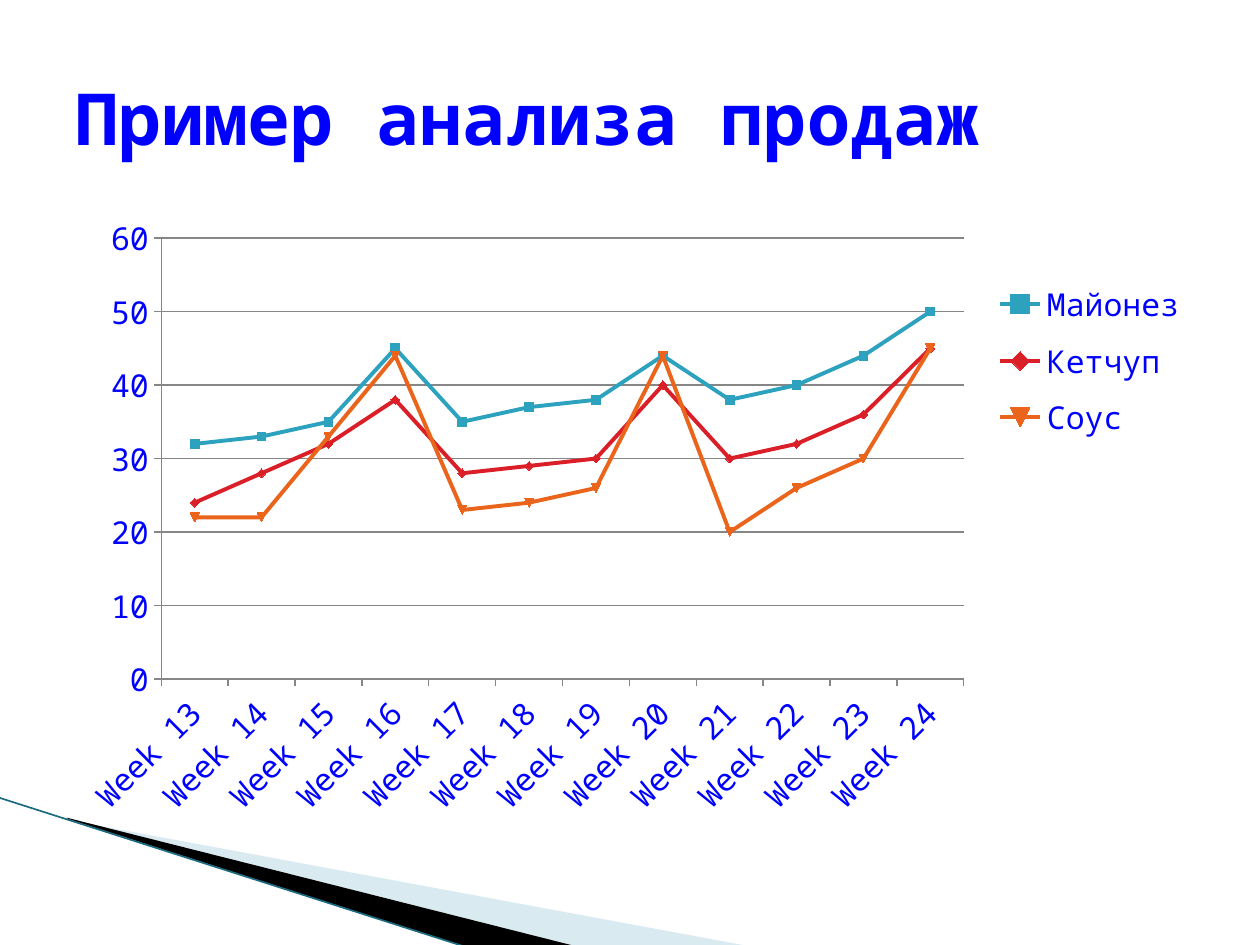
from typing import NamedTuple

from lxml import etree
from pptx import Presentation
from pptx import util as u
from pptx.chart.data import CategoryChartData
from pptx.dml.color import RGBColor
from pptx.enum import chart as ch, shapes, text
from pptx.oxml.ns import qn

BLUE = RGBColor(0x00, 0x00, 0xFF)
BLACK = RGBColor(0x00, 0x00, 0x00)
PALE = RGBColor(0xA0, 0xCB, 0xDC)
DARK = RGBColor(0x1A, 0x6B, 0x80)
GRAY = RGBColor(0x86, 0x86, 0x86)
TEAL = RGBColor(0x2D, 0xA2, 0xBF)
RED = RGBColor(0xDA, 0x1F, 0x28)
ORANGE = RGBColor(0xEB, 0x64, 0x1B)
FACE = "Noto Sans Mono"
LABEL = {"name": FACE, "size": u.Pt(18), "bold": False}
TITLE = {"name": FACE, "size": u.Pt(41), "bold": True}
WIDE, HIGH = 9, 4.95


class Wedge(NamedTuple):
    points: list[tuple[float, float]]
    fill: RGBColor
    alpha: int


class Sales(NamedTuple):
    name: str
    color: RGBColor
    values: list[int]


class Area(NamedTuple):
    left: float
    top: float
    width: float
    height: float


PLOT = Area(0.78, 0.27, 6.37, 3.5)
LEGEND = Area(7.35, 0.52, 1.6, 1.45)
WEDGES = [
    Wedge([(0.55, 6.51), (5.95, 7.51), (4.56, 7.51), (0.55, 6.5)], PALE, 40),
    Wedge([(0.53, 6.49), (4.57, 7.51), (3.72, 7.52), (0.54, 6.5)], BLACK, 100),
]
SALES = [
    Sales("Майонез", TEAL, [32, 33, 35, 45, 35, 37, 38, 44, 38, 40, 44, 50]),
    Sales("Кетчуп", RED, [24, 28, 32, 38, 28, 29, 30, 40, 30, 32, 36, 45]),
    Sales("Соус", ORANGE, [22, 22, 33, 44, 23, 24, 26, 44, 20, 26, 30, 45]),
]


def style(font, look: dict) -> None:
    for key, value in look.items():
        setattr(font, key, value)
    font.color.rgb = BLUE


def draw_wedge(slide, wedge: Wedge) -> None:
    points = [(u.Inches(x), u.Inches(y)) for x, y in wedge.points]
    pen = slide.shapes.build_freeform(*points[0])
    pen.add_line_segments(points[1:], close=True)
    shape = pen.convert_to_shape()
    shape.shadow.inherit = False
    shape.fill.solid()
    shape.fill.fore_color.rgb = wedge.fill
    shape.line.fill.background()
    if wedge.alpha < 100:
        color = shape.element.spPr.find(qn("a:solidFill"))[0]
        etree.SubElement(color, qn("a:alpha"), val=str(wedge.alpha * 1000))


def draw_edge(slide) -> None:
    edge = slide.shapes.add_connector(
        shapes.MSO_CONNECTOR.STRAIGHT,
        u.Inches(-0.01), u.Inches(6.33), u.Inches(3.71), u.Inches(7.52))
    edge.line.color.rgb = DARK
    edge.line.width = u.Pt(0.95)
    etree.SubElement(edge.element.spPr, qn("a:effectLst"))


def place(part, area: Area, before: str, inner: bool = False) -> None:
    for old in part.findall(qn("c:layout")):
        part.remove(old)
    layout = etree.Element(qn("c:layout"))
    part.find(qn(before)).addprevious(layout)
    manual = etree.SubElement(layout, qn("c:manualLayout"))
    marks = {"layoutTarget": "inner"} if inner else {}
    marks |= {"xMode": "edge", "yMode": "edge",
              "x": area.left / WIDE, "y": area.top / HIGH,
              "w": area.width / WIDE, "h": area.height / HIGH}
    for tag, value in marks.items():
        etree.SubElement(manual, qn(f"c:{tag}"), val=str(value))


def draw_chart(slide, sales: list[Sales]) -> None:
    data = CategoryChartData()
    data.categories = [f"Week {week}" for week in range(13, 25)]
    for item in sales:
        data.add_series(item.name, item.values)
    chart = slide.shapes.add_chart(
        ch.XL_CHART_TYPE.LINE_MARKERS, u.Inches(0.5), u.Inches(1.62),
        u.Inches(WIDE), u.Inches(HIGH), data).chart
    style(chart.font, LABEL)
    chart.has_title = False
    chart.has_legend = True
    chart.legend.position = ch.XL_LEGEND_POSITION.RIGHT
    chart.legend.include_in_layout = False
    style(chart.legend.font, LABEL)
    place(chart.element.xpath("//c:legend")[0], LEGEND, "c:overlay")
    place(chart.element.xpath("//c:plotArea")[0], PLOT, "c:lineChart", True)
    chart.plots[0].vary_by_categories = False
    for line, item in zip(chart.plots[0].series, sales):
        line.smooth = False
        line.format.line.color.rgb = item.color
        line.format.line.width = u.Pt(2.25)
        line.marker.size = 5
        line.marker.format.fill.solid()
        line.marker.format.fill.fore_color.rgb = item.color
        line.marker.format.line.color.rgb = item.color
    for axis in (chart.category_axis, chart.value_axis):
        axis.major_tick_mark = ch.XL_TICK_MARK.OUTSIDE
        axis.format.line.color.rgb = GRAY
        axis.format.line.width = u.Pt(0.75)
        style(axis.tick_labels.font, LABEL)
    for body in chart.element.xpath("//c:catAx/c:txPr/a:bodyPr"):
        body.set("rot", str(-45 * 60000))
    scale = chart.value_axis
    scale.minimum_scale, scale.maximum_scale, scale.major_unit = 0, 60, 10
    scale.has_major_gridlines = True
    scale.major_gridlines.format.line.color.rgb = GRAY
    scale.major_gridlines.format.line.width = u.Pt(0.75)


def draw_title(slide, words: str) -> None:
    box = slide.shapes.add_textbox(
        u.Inches(0.5), u.Inches(0.3), u.Inches(9), u.Inches(1.25))
    frame = box.text_frame
    frame.word_wrap = True
    frame.vertical_anchor = text.MSO_ANCHOR.MIDDLE
    run = frame.paragraphs[0].add_run()
    run.text = words
    style(run.font, TITLE)


def main() -> None:
    deck = Presentation()
    deck.slide_width, deck.slide_height = u.Inches(10), u.Inches(7.5)
    slide = deck.slides.add_slide(deck.slide_layouts[6])
    for wedge in WEDGES:
        draw_wedge(slide, wedge)
    draw_edge(slide)
    draw_chart(slide, SALES)
    draw_title(slide, "Пример анализа продаж")
    deck.save("out.pptx")


if __name__ == "__main__":
    main()
